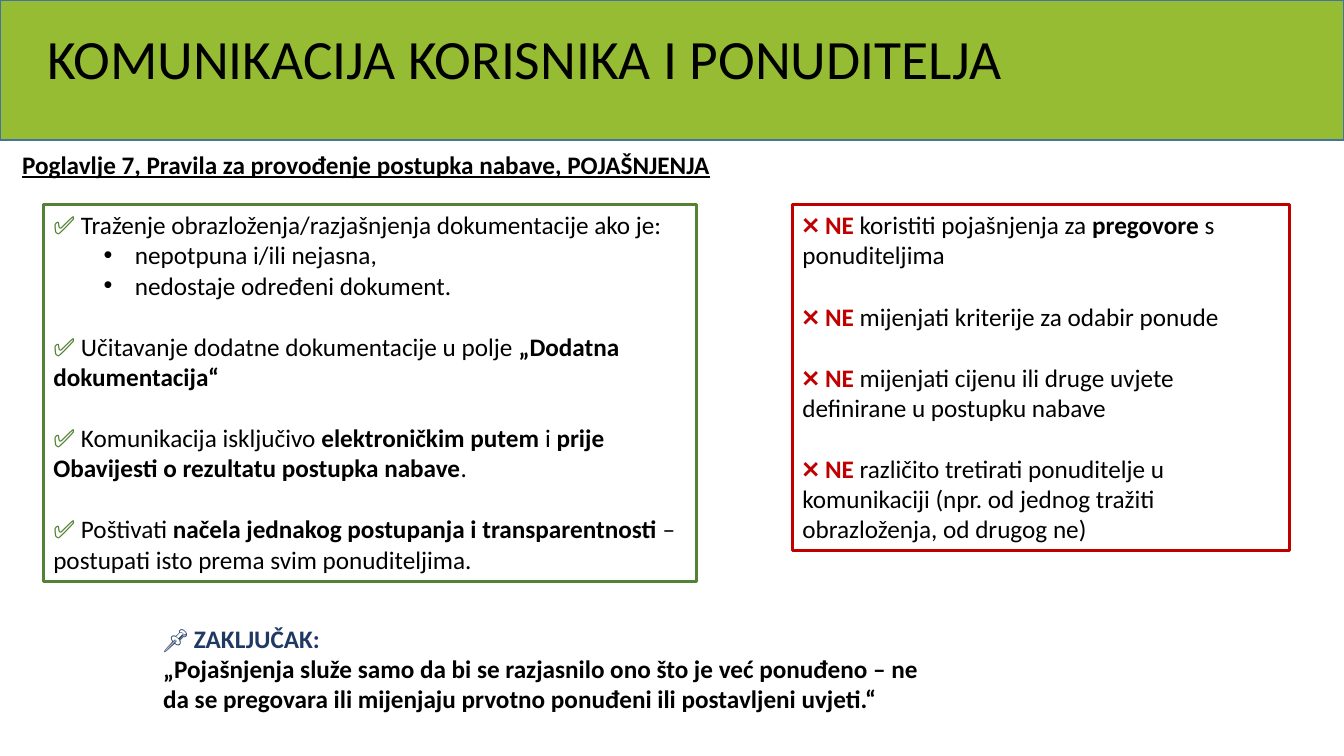
"""Builds the slide on communication between beneficiary and bidder."""
from dataclasses import dataclass

from lxml import etree
from pptx import Presentation
from pptx.dml.color import RGBColor
from pptx.enum import shapes, text
from pptx.oxml import ns
from pptx.util import Inches, Pt


@dataclass(frozen=True)
class Theme:
    font: str = "Calibri"
    title_size: float = 39.6
    body_size: float = 18
    item_gap: float = 22
    black: str = "000000"
    band: str = "96BC33"
    band_line: str = "43739E"
    allowed: str = "548235"
    forbidden: str = "C00000"
    conclusion: str = "203864"


THEME = Theme()

ALLOWED = [
    ("✅", " Traženje obrazloženja/razjašnjenja dokumentacije ako je:"),
    "nepotpuna i/ili nejasna,",
    "nedostaje određeni dokument.",
    ("✅ ", "Učitavanje dodatne dokumentacije u polje ", "„Dodatna dokumentacija“"),
    ("✅ ", "Komunikacija isključivo ", "elektroničkim putem", " i ",
     "prije Obavijesti o rezultatu postupka nabave", "."),
    ("✅ ", "Poštivati ", "načela jednakog postupanja i transparentnosti",
     " – postupati isto prema svim ponuditeljima."),
]
FORBIDDEN = [
    ("❌ NE", " koristiti pojašnjenja za ", "pregovore", " s ponuditeljima"),
    ("❌ NE ", "mijenjati kriterije za odabir ponude"),
    ("❌ NE ", "mijenjati cijenu ili druge uvjete definirane u postupku nabave"),
    ("❌ NE ", "različito tretirati ponuditelje u komunikaciji "
     "(npr. od jednog tražiti obrazloženja, od drugog ne)"),
]


def add_span(para, words, *, size=THEME.body_size, color=THEME.black,
             bold=False, underline=False):
    span = para.add_run()
    span.text = words
    font = span.font
    font.name, font.size = THEME.font, Pt(size)
    font.bold, font.underline = bold, underline
    font.color.rgb = RGBColor.from_string(color)


def add_rect(page, left, top, width, height, *, line, weight, fill=None):
    box = page.shapes.add_shape(shapes.MSO_SHAPE.RECTANGLE, Inches(left),
                                Inches(top), Inches(width), Inches(height))
    box.shadow.inherit = False
    if fill:
        box.fill.solid()
        box.fill.fore_color.rgb = RGBColor.from_string(fill)
    else:
        box.fill.background()
    box.line.color.rgb = RGBColor.from_string(line)
    box.line.width = Pt(weight)
    return box


def add_text_box(page, left, top, width, height, *, wrap=True):
    box = page.shapes.add_textbox(Inches(left), Inches(top),
                                  Inches(width), Inches(height))
    box.text_frame.word_wrap = wrap
    box.text_frame.auto_size = text.MSO_AUTO_SIZE.SHAPE_TO_FIT_TEXT
    return box.text_frame


def set_bullet(para):
    para.level = 1
    properties = para._p.get_or_add_pPr()
    properties.set("marL", str(Inches(0.81)))
    properties.set("indent", str(Inches(-0.31)))
    etree.SubElement(properties, ns.qn("a:buFont"), typeface="Arial")
    etree.SubElement(properties, ns.qn("a:buChar"), char="•")


def add_rule_box(page, left, width, height, items, color):
    """Tuples are a coloured mark, then plain and bold parts in turn; strings are bullets."""
    box = add_rect(page, left, 2.03, width, height, line=color, weight=2.25)
    frame = box.text_frame
    frame.word_wrap = True
    frame.auto_size = text.MSO_AUTO_SIZE.SHAPE_TO_FIT_TEXT
    frame.vertical_anchor = text.MSO_ANCHOR.TOP
    for index, item in enumerate(items):
        para = frame.add_paragraph() if index else frame.paragraphs[0]
        para.alignment = text.PP_ALIGN.LEFT
        if isinstance(item, str):
            set_bullet(para)
            add_span(para, item)
            continue
        if index:
            para.space_before = Pt(THEME.item_gap)
        mark, *parts = item
        add_span(para, mark, color=color, bold=True)
        for place, part in enumerate(parts):
            add_span(para, part, bold=place % 2 == 1)


def add_title(page, words):
    title = page.shapes.title
    band = add_rect(page, 0, 0, 13.33, 1.39, line=THEME.band_line, weight=1,
                    fill=THEME.band)
    title.element.addprevious(band.element)
    title.left, title.top = Inches(0.37), Inches(0.17)
    title.width, title.height = Inches(12.6), Inches(0.89)
    frame = title.text_frame
    frame.auto_size = text.MSO_AUTO_SIZE.NONE
    frame.vertical_anchor = text.MSO_ANCHOR.MIDDLE
    para = frame.paragraphs[0]
    para.alignment = text.PP_ALIGN.LEFT
    para.line_spacing = 0.9
    add_span(para, words, size=THEME.title_size)


def add_conclusion(page):
    frame = add_text_box(page, 1.52, 6.13, 7.76, 1.01)
    heading = frame.paragraphs[0]
    add_span(heading, "📌 ", color=THEME.conclusion)
    add_span(heading, "ZAKLJUČAK:", color=THEME.conclusion, bold=True)
    add_span(frame.add_paragraph(),
             "„Pojašnjenja služe samo da bi se razjasnilo ono što je već ponuđeno – ne "
             "da se pregovara ili mijenjaju prvotno ponuđeni ili postavljeni uvjeti.“",
             bold=True)


def main():
    deck = Presentation()
    deck.slide_width, deck.slide_height = Inches(13.33), Inches(7.5)
    page = deck.slides.add_slide(deck.slide_layouts.get_by_name("Title Only"))
    add_title(page, "KOMUNIKACIJA KORISNIKA I PONUDITELJA")
    add_rule_box(page, 0.43, 6.48, 3.74, ALLOWED, THEME.allowed)
    add_rule_box(page, 7.86, 4.93, 3.43, FORBIDDEN, THEME.forbidden)
    add_conclusion(page)
    chapter = add_text_box(page, 0.12, 1.43, 7.09, 0.4, wrap=False)
    add_span(chapter.paragraphs[0],
             "Poglavlje 7, Pravila za provođenje postupka nabave, POJAŠNJENJA",
             bold=True, underline=True)
    deck.save("out.pptx")


if __name__ == "__main__":
    main()
